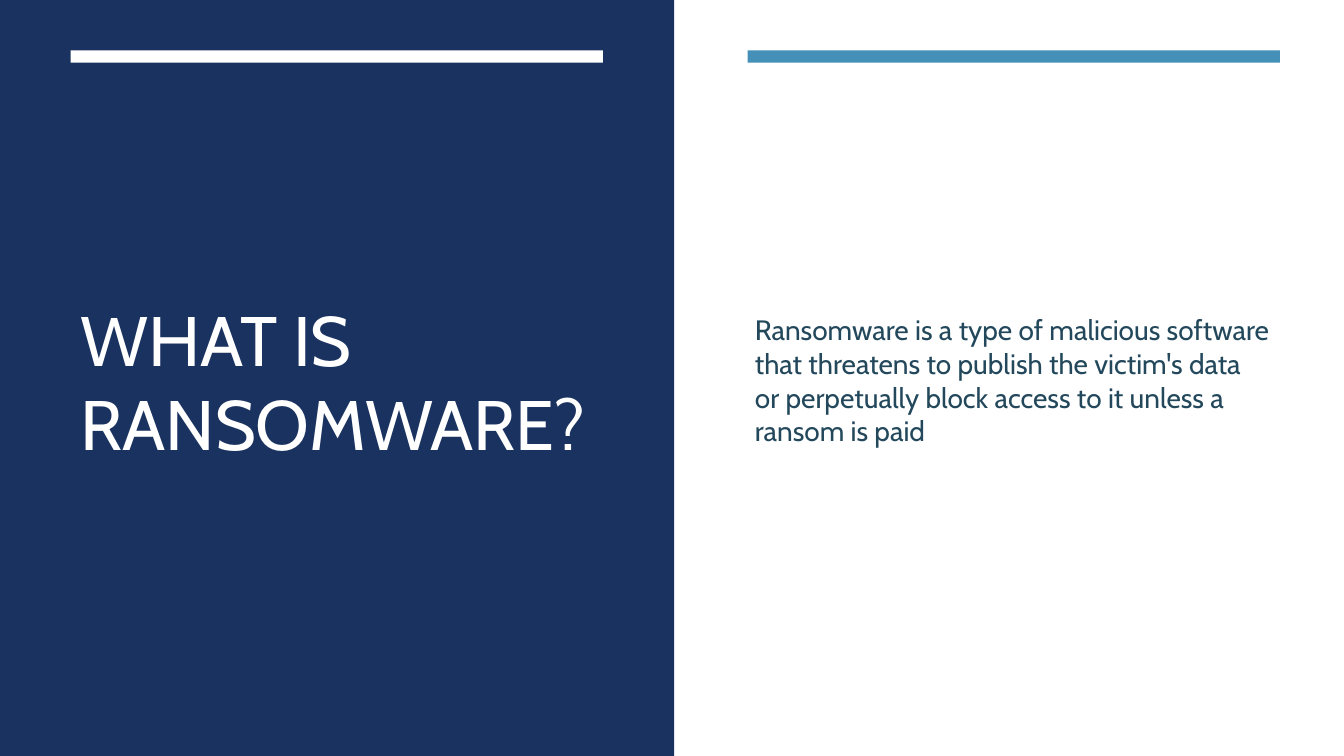
from pptx import Presentation
from pptx.dml.color import RGBColor
from pptx.enum.shapes import MSO_SHAPE
from pptx.enum.text import MSO_ANCHOR, PP_ALIGN
from pptx.util import Pt

theme = {
    "font": "Cabin",
    "white": RGBColor.from_string("FFFFFF"),
    "navy": RGBColor.from_string("1A3260"),
    "blue": RGBColor.from_string("4590B8"),
    "ink": RGBColor.from_string("23485C"),
    "title_size": Pt(50),
    "body_size": Pt(20),
}

deck = Presentation()
deck.slide_width, deck.slide_height = Pt(960), Pt(540)
slide = deck.slides.add_slide(deck.slide_layouts[6])

# Background, title panel and the two accent bars
for left, top, width, height, color in [
    (0, 0, 960, 540, "white"),
    (0, 0, 481.5, 540, "navy"),
    (50.4, 36, 380.2, 8.8, "white"),
    (534, 36, 380.2, 8.8, "blue"),
]:
    panel = slide.shapes.add_shape(
        MSO_SHAPE.RECTANGLE, Pt(left), Pt(top), Pt(width), Pt(height))
    panel.shadow.inherit = False
    panel.fill.solid()
    panel.fill.fore_color.rgb = theme[color]
    panel.line.fill.background()

# Question on the left, answer on the right
frame_format = {"word_wrap": True, "vertical_anchor": MSO_ANCHOR.MIDDLE}
for left, width, wording, size, color, spacing in [
    (50.4, 380.2, "WHAT IS RANSOMWARE?", "title_size", "white", {}),
    (532.1, 382.3,
     "Ransomware is a type of malicious software that threatens to publish "
     "the victim's data or perpetually block access to it unless a ransom is paid",
     "body_size", "ink", {"space_before": Pt(4), "space_after": Pt(6)}),
]:
    frame = slide.shapes.add_textbox(
        Pt(left), Pt(81.4), Pt(width), Pt(380.2)).text_frame
    for name, value in frame_format.items():
        setattr(frame, name, value)
    paragraph = frame.paragraphs[0]
    for name, value in {"alignment": PP_ALIGN.LEFT, **spacing}.items():
        setattr(paragraph, name, value)
    run = paragraph.add_run()
    run.text = wording
    for name, value in {"name": theme["font"], "size": theme[size]}.items():
        setattr(run.font, name, value)
    run.font.color.rgb = theme[color]

deck.save("out.pptx")
